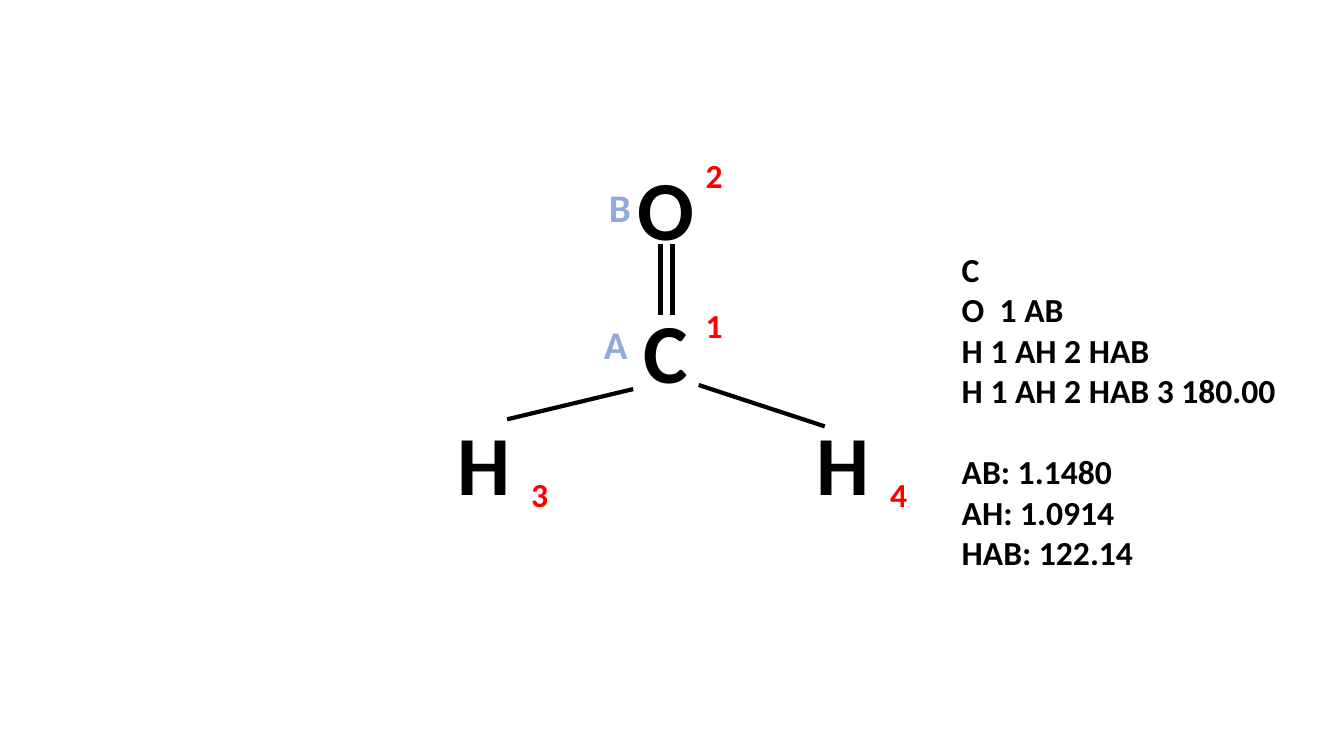
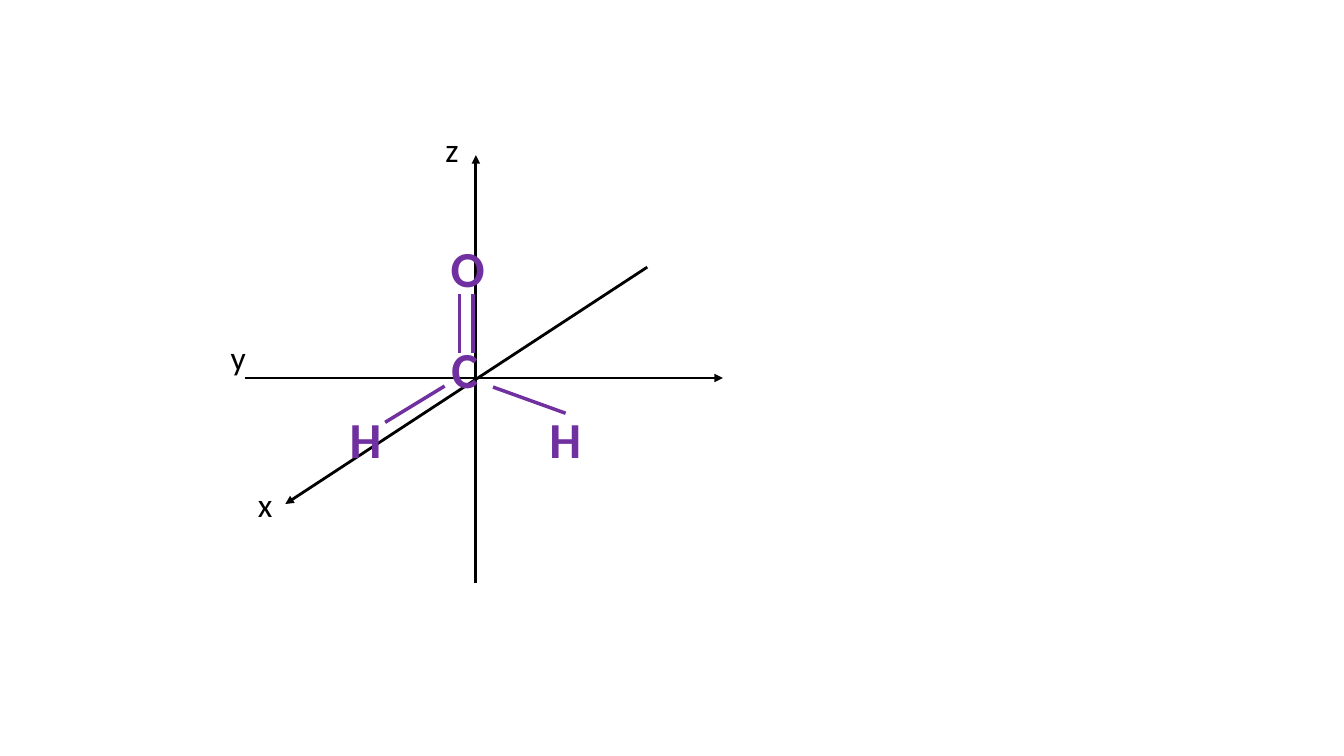
import pptx
import pptx.dml.color
import pptx.enum.shapes
import pptx.enum.text
import pptx.oxml
import pptx.oxml.ns
import pptx.util

Inches = pptx.util.Inches
Pt = pptx.util.Pt
FONT = "Calibri"
BLACK, RED, BLUE, PURPLE = "000000", "FF0000", "8FAADC", "7030A0"


def rgb(value):
    return pptx.dml.color.RGBColor.from_string(value)


def add_text(slide, box, lines, size, color, bold=True, gaps=()):
    sp = slide.shapes.add_textbox(*map(Inches, box))
    tf = sp.text_frame
    tf.word_wrap = False
    tf.auto_size = pptx.enum.text.MSO_AUTO_SIZE.SHAPE_TO_FIT_TEXT
    for i, line in enumerate(lines):
        p = tf.paragraphs[0] if i == 0 else tf.add_paragraph()
        if i in gaps:
            p.space_before = Pt(size * 1.22)
        r = p.add_run()
        r.text = line
        r.font.name = FONT
        r.font.size = Pt(size)
        r.font.bold = bold
        r.font.color.rgb = rgb(color)


def add_line(slide, start, end, color, width, arrow=False):
    cn = slide.shapes.add_connector(
        pptx.enum.shapes.MSO_CONNECTOR.STRAIGHT, *map(Inches, (*start, *end)))
    cn.line.color.rgb = rgb(color)
    cn.line.width = Pt(width)
    if arrow:
        tail = pptx.oxml.parse_xml(
            f'<a:tailEnd {pptx.oxml.ns.nsdecls("a")} type="triangle"/>')
        cn.line._get_or_add_ln().append(tail)
    cn._element.spPr.append(
        pptx.oxml.parse_xml(f'<a:effectLst {pptx.oxml.ns.nsdecls("a")}/>'))


def add_labels(slide, left, top, labels, width, height, size, color, bold=True):
    for text, x, y in labels:
        add_text(slide, (left + x, top + y, width, height), [text], size, color, bold)


def add_lines(slide, left, top, lines, color, width, arrow=False):
    for x1, y1, x2, y2 in lines:
        add_line(slide, (left + x1, top + y1), (left + x2, top + y2), color, width, arrow)


def add_molecule(slide, left, top, atoms, height, bonds, size, color, width):
    for symbol, x, y, w in atoms:
        add_text(slide, (left + x, top + y, w, height), [symbol], size, color)
    add_lines(slide, left, top, bonds, color, width)


def add_axes(slide, left, top):
    axes = [(0.24, 2.52, 4.98, 2.52), (2.53, 4.55, 2.53, 0.31), (4.23, 1.42, 0.64, 3.77)]
    names = [("y", 0, 2.06), ("z", 2.13, 0), ("x", 0.27, 3.52)]
    add_lines(slide, left, top, axes, BLACK, 2, True)
    add_labels(slide, left, top, names, 0.35, 0.5, 24, BLACK, False)


def build_matrix_slide(slide):
    left, top = 4.44, 1.5
    atoms = [("O", 1.78, 0, 0.77), ("C", 1.84, 1.42, 0.65),
             ("H", 3.56, 2.53, 0.73), ("H", 0, 2.53, 0.73)]
    bonds = [(1.84, 2.36, 0.59, 2.66), (3.74, 2.73, 2.49, 2.32),
             (2.11, 0.92, 2.11, 1.63), (2.23, 0.92, 2.23, 1.63)]
    numbers = [("1", 2.46, 1.48), ("2", 2.46, -0.01), ("3", 0.73, 3.15), ("4", 4.29, 3.15)]
    letters = [("A", 1.45, 1.63), ("B", 1.5, 0.27)]
    matrix = ["C", "O  1 AB", "H 1 AH 2 HAB", "H 1 AH 2 HAB 3 180.00",
              "AB: 1.1480", "AH: 1.0914", "HAB: 122.14"]
    add_molecule(slide, left, top, atoms, 1.11, bonds, 60, BLACK, 3)
    add_labels(slide, left, top, numbers, 0.37, 0.5, 24, RED)
    add_labels(slide, left, top, letters, 0.42, 0.57, 28, BLUE)
    add_text(slide, (9.44, 2.42, 3.42, 3.35), matrix, 24, BLACK, gaps=(4,))


def build_axes_slide(slide):
    atoms = [("O", 1, 0, 0.54), ("C", 1.01, 1.01, 0.47),
             ("H", 0, 1.7, 0.52), ("H", 1.98, 1.7, 0.52)]
    bonds = [(1.19, 0.62, 1.19, 1.2), (1.32, 0.62, 1.32, 1.2),
             (1.04, 1.53, 0.45, 1.89), (1.52, 1.54, 2.24, 1.8)]
    add_axes(slide, 2.19, 1.23)
    add_molecule(slide, 3.37, 2.3, atoms, 0.71, bonds, 36, PURPLE, 2.5)


def main():
    prs = pptx.Presentation()
    prs.slide_width = Inches(13.33)
    prs.slide_height = Inches(7.5)
    for build in (build_matrix_slide, build_axes_slide):
        build(prs.slides.add_slide(prs.slide_layouts[6]))
    prs.save("out.pptx")


if __name__ == "__main__":
    main()
